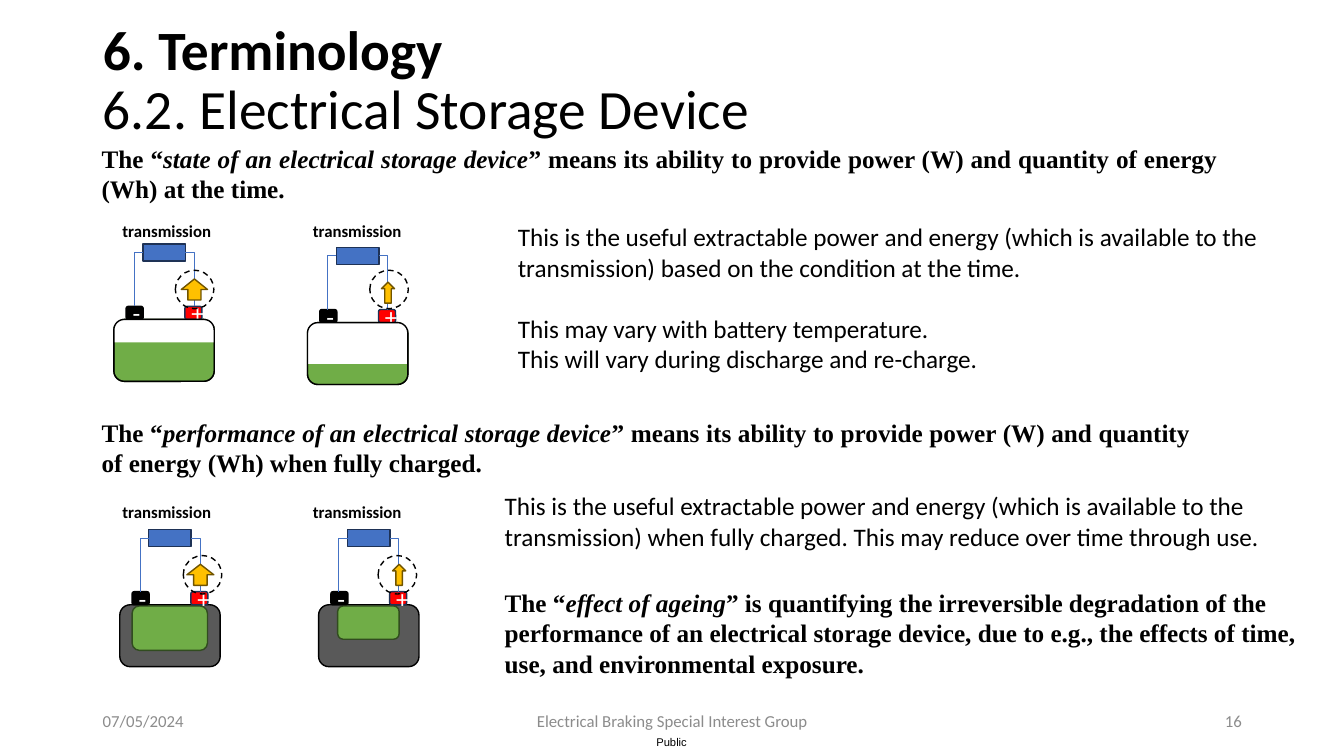
from dataclasses import dataclass, field
from typing import Any

from lxml.etree import SubElement
from pptx import Presentation
from pptx.dml.color import RGBColor as Rgb
from pptx.enum.dml import MSO_LINE_DASH_STYLE as Dash
from pptx.enum.shapes import MSO_CONNECTOR_TYPE as Link, MSO_SHAPE as Kind
from pptx.enum.text import MSO_ANCHOR as Anchor, PP_ALIGN as Align
from pptx.oxml.ns import qn
from pptx.util import Cm, Pt

Box = tuple[float, float, float, float]
Runs = list[tuple[str, dict[str, Any]]]


@dataclass
class Note:
    box: Box
    paras: list[Runs]
    font: dict[str, Any]
    para: dict[str, Any] = field(default_factory=dict)
    frame: dict[str, Any] = field(default_factory=dict)
    color: str = "000000"


@dataclass
class Device:
    x: float
    y: float
    ring: tuple[float, float]
    arrow: float
    empty: float = 0
    cell: tuple[float, float, float] | None = None


def paint(target: Any, color: str) -> None:
    target.rgb = Rgb.from_string(color)


def apply(target: Any, values: dict[str, Any]) -> None:
    for name, value in values.items():
        setattr(target, name, value)


def write(para: Any, runs: Runs, font: dict[str, Any], color: str) -> None:
    for text, extra in runs:
        if text == "\n":
            para.add_line_break()
            continue
        run = para.add_run()
        run.text = text
        apply(run.font, font | extra)
        paint(run.font.color, color)


def add_note(shapes: Any, note: Note) -> None:
    frame = shapes.add_textbox(*map(Cm, note.box)).text_frame
    apply(frame, {"word_wrap": True} | note.frame)
    for i, runs in enumerate(note.paras):
        para = frame.add_paragraph() if i else frame.paragraphs[0]
        apply(para, note.para)
        if i:
            para.space_before = Pt(22)
        write(para, runs, note.font, note.color)


def add_part(shapes: Any, kind: Any, box: Box, fill: str = "", line: str = "", sign: str = "") -> Any:
    part = shapes.add_shape(kind, *map(Cm, box))
    part.shadow.inherit = False
    if fill:
        part.fill.solid()
        paint(part.fill.fore_color, fill)
    else:
        part.fill.background()
    if line:
        paint(part.line.color, line)
        part.line.width = Pt(1)
    else:
        part.line.fill.background()
    if sign:
        para = part.text_frame.paragraphs[0]
        para.alignment = Align.CENTER
        write(para, [(sign, {})], SANS, "FFFFFF")
    return part


def add_wire(shapes: Any, start: tuple[float, float], end: tuple[float, float]) -> None:
    wire = shapes.add_connector(Link.ELBOW, *map(Cm, start + end))
    paint(wire.line.color, "4472C4")
    wire.line.width = Pt(0.5)
    props = wire._element.spPr
    props.find(qn("a:prstGeom")).set("prst", "bentConnector2")
    SubElement(props, qn("a:effectLst"))


def add_device(shapes: Any, dev: Device) -> None:
    x, y = dev.x, dev.y
    body = (x, y, 2.53, 1.56)
    round_box = Kind.ROUNDED_RECTANGLE
    if dev.cell:
        shift, width, height = dev.cell
        add_part(shapes, round_box, body, "595959", "000000")
        add_part(shapes, round_box, (x + shift, y + 0.03, width, height), GREEN, MOSS)
    else:
        add_part(shapes, round_box, body, GREEN, MOSS)
    for shift, fill, line, sign in ((0.31, "000000", "000000", "-"), (1.79, "FF0000", NAVY, "+")):
        add_part(shapes, round_box, (x + shift, y - 0.33, 0.43, 0.33), fill, line, sign)
    if dev.empty:
        add_part(shapes, Kind.RECTANGLE, (x, y, 2.53, dev.empty), "FFFFFF")
        add_part(shapes, round_box, body, line="000000")
    top, left, width, height = y - 1.9, x + 0.73, 1.07, 0.43
    add_part(shapes, Kind.RECTANGLE, (left, top, width, height), "4472C4", NAVY)
    for start, end in ((left, x + 0.51), (left + width, x + 2.02)):
        add_wire(shapes, (start, top + height / 2), (end, y - 0.33))
    add_part(shapes, Kind.UP_ARROW, (x + 2.03 - dev.arrow / 2, y - 1.02, dev.arrow, 0.53), "FFC000", "705400")
    ring = add_part(shapes, Kind.OVAL, (*dev.ring, 0.97, 0.97), line="000000")
    ring.line.dash_style = Dash.DASH


GREEN, MOSS, NAVY, GRAY = "70AD47", "314C1F", "1E3256", "8C8C8C"
SANS = {"name": "Calibri", "size": Pt(18)}
SERIF = {"name": "Times New Roman", "size": Pt(18), "bold": True}
SMALL = {"name": "Calibri", "size": Pt(12)}
ITALIC = {"italic": True}
BLOCK = {"alignment": Align.JUSTIFY, "space_after": Pt(6)}
INSET = {"margin_right": Cm(2.85)}
MIDDLE = {"vertical_anchor": Anchor.MIDDLE}
TIGHT = dict.fromkeys(("margin_left", "margin_right", "margin_top", "margin_bottom"), 0)

DEVICES = [
    Device(2.87, 8.05, (4.42, 6.81), 0.66, empty=0.58),
    Device(7.75, 8.13, (9.32, 6.81), 0.33, empty=1.04),
    Device(3.02, 15.24, (4.62, 14.0), 0.68, cell=(0.31, 1.9, 1.12)),
    Device(8.03, 15.24, (9.53, 14.0), 0.33, cell=(0.48, 1.55, 0.84)),
]

NOTES = [
    Note((2.31, 3.48, 31.22, 1.8), [[
        ("The “", {}), ("state of an electrical storage device", ITALIC),
        ("” means its ability to provide power (W) and quantity of energy (Wh) at the time.", {}),
    ]], SERIF, BLOCK, INSET),
    Note((12.8, 5.46, 20.37, 4.11), [
        [("This is the useful extractable power and energy (which is available to the "
          "transmission) based on the condition at the time.", {})],
        [("This may vary with battery temperature.", {}), ("\n", {}),
         ("This will vary during discharge and re-charge.", {})],
    ], SANS),
    Note((2.31, 10.39, 30.53, 1.8), [[
        ("The “", {}), ("performance of an electrical storage device", ITALIC),
        ("” means its ability to provide power (W) and quantity of energy (Wh) when fully charged.", {}),
    ]], SERIF, BLOCK, INSET),
    Note((12.47, 12.24, 20.75, 1.8), [[
        ("This is the useful extractable power and energy (which is available to the "
         "transmission) when fully charged. This may reduce over time through use.", {}),
    ]], SANS),
    Note((12.47, 14.68, 21.13, 2.57), [[
        ("The “", {}), ("effect of ageing", ITALIC),
        ("” is quantifying the irreversible degradation of the performance of an electrical "
         "storage device, due to e.g., the effects of time, use, and environmental exposure.", {}),
    ]], SERIF),
    Note((16.54, 18.54, 0.86, 0.33), [[("Public", {})]],
         {"name": "Arial", "size": Pt(8)}, frame=TIGHT | {"word_wrap": False}),
]
NOTES += [
    Note((left, top, 4.09, 0.76), [[("transmission", {})]],
         SMALL | {"bold": True}, {"alignment": Align.CENTER})
    for top in (5.44, 12.52) for left in (2.16, 6.96)
]
NOTES += [
    Note((left, 17.65, width, 1.02), [[(text, {})]], SMALL, {"alignment": align}, MIDDLE, GRAY)
    for left, width, text, align in (
        (2.34, 7.62, "07/05/2024", Align.LEFT),
        (11.23, 11.43, "Electrical Braking Special Interest Group", Align.CENTER),
        (23.93, 7.62, "16", Align.RIGHT),
    )
]


def main() -> None:
    deck = Presentation()
    apply(deck, {"slide_width": Cm(33.87), "slide_height": Cm(19.05)})
    shapes = deck.slides.add_slide(deck.slide_layouts[5]).shapes
    title = shapes.title
    apply(title, {"left": Cm(2.34), "top": Cm(0.43), "width": Cm(29.21), "height": Cm(3.68)})
    apply(title.text_frame, {"vertical_anchor": Anchor.TOP, "word_wrap": True})
    para = title.text_frame.paragraphs[0]
    apply(para, {"alignment": Align.LEFT, "line_spacing": 0.9})
    heads = [("6. Terminology", {"bold": True}), ("\n", {}), ("6.2. Electrical Storage Device", {"bold": False})]
    write(para, heads, {"name": "Calibri", "size": Pt(39.6)}, "000000")
    for dev in DEVICES:
        add_device(shapes, dev)
    for note in NOTES:
        add_note(shapes, note)
    deck.save("out.pptx")


if __name__ == "__main__":
    main()
